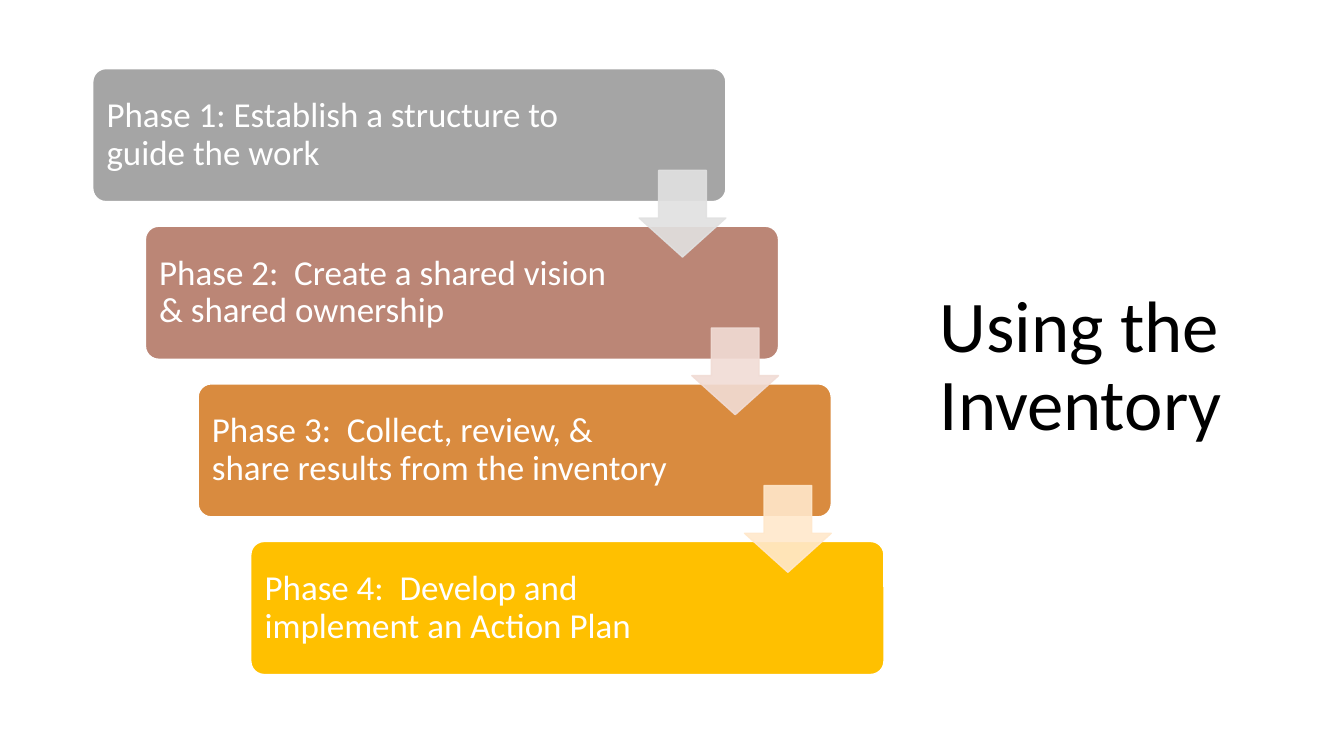
from pptx import Presentation
from pptx.dml.color import RGBColor
from pptx.enum.shapes import MSO_SHAPE
from pptx.enum.text import MSO_ANCHOR, MSO_AUTO_SIZE, PP_ALIGN
from pptx.oxml.ns import qn
from pptx.util import Inches, Pt
from lxml import etree

ROUND = MSO_SHAPE.ROUNDED_RECTANGLE
ARROW = MSO_SHAPE.DOWN_ARROW
MIDDLE = MSO_ANCHOR.MIDDLE
FIXED = MSO_AUTO_SIZE.NONE
LEFT = PP_ALIGN.LEFT

PHASES = [
    ("Phase 1: Establish a structure to guide the work", "A5A5A5", "E1E1E1"),
    ("Phase 2:  Create a shared vision & shared ownership", "BB8676", "F1DCD5"),
    ("Phase 3:  Collect, review, & share results from the inventory", "D98B3F", "FFE8CB"),
    ("Phase 4:  Develop and implement an Action Plan", "FFC000", None),
]
COLS, ROWS = 100, 100
STEP_X, STEP_Y = 3.92, 20.85


def color(code):
    return RGBColor.from_string(code)


class Deck:
    font = "Calibri"
    white = "FFFFFF"
    black = "000000"

    def __init__(self):
        self.prs = Presentation()
        self.prs.slide_width = Inches(13.33)
        self.prs.slide_height = Inches(7.5)
        self.slide = self.prs.slides.add_slide(self.prs.slide_layouts[5])

    def area(self, x, y, w, h):
        col = self.prs.slide_width / COLS
        row = self.prs.slide_height / ROWS
        return int(x * col), int(y * row), int(w * col), int(h * row)

    def label(self, frame, text, size, code):
        frame.text = text
        frame.word_wrap = True
        frame.auto_size = FIXED
        frame.vertical_anchor = MIDDLE
        para = frame.paragraphs[0]
        para.alignment = LEFT
        para.line_spacing = 0.9
        for run in para.runs:
            run.font.name = self.font
            run.font.size = Pt(size)
            run.font.color.rgb = color(code)

    def title(self, text, *spot):
        shape = self.slide.shapes.title
        shape.left, shape.top, shape.width, shape.height = self.area(*spot)
        self.label(shape.text_frame, text, 52, self.black)

    def shape(self, kind, spot, ratios, fill, line):
        shape = self.slide.shapes.add_shape(kind, *self.area(*spot))
        shape.shadow.inherit = False
        for i, ratio in enumerate(ratios):
            shape.adjustments[i] = ratio
        shape.fill.solid()
        shape.fill.fore_color.rgb = color(fill)
        shape.line.color.rgb = color(line)
        shape.line.width = Pt(1)
        return shape

    def phase(self, text, fill, *spot):
        frame = self.shape(ROUND, spot, [0.1], fill, self.white).text_frame
        frame.margin_left = frame.margin_top = frame.margin_bottom = Inches(0.1)
        frame.margin_right = Inches(1.48)
        self.label(frame, text, 25, self.white)

    def arrow(self, fill, *spot):
        shape = self.shape(ARROW, spot, [0.55, 0.45], fill, fill)
        for node in shape._element.spPr.iter(qn("a:srgbClr")):
            etree.SubElement(node, qn("a:alpha")).set("val", "90000")


def main():
    deck = Deck()
    deck.title("Using the Inventory", 69.17, 8, 24, 81.33)
    for i, (text, fill, _) in enumerate(PHASES):
        deck.phase(text, fill, 6.9 + i * STEP_X, 9.07 + i * STEP_Y, 47.11, 17.6)
    for i, (_, _, tint) in enumerate(PHASES[:-1]):
        deck.arrow(tint, 47.56 + i * STEP_X, 22.53 + i * STEP_Y, 6.45, 11.47)
    deck.prs.save("out.pptx")


if __name__ == "__main__":
    main()
